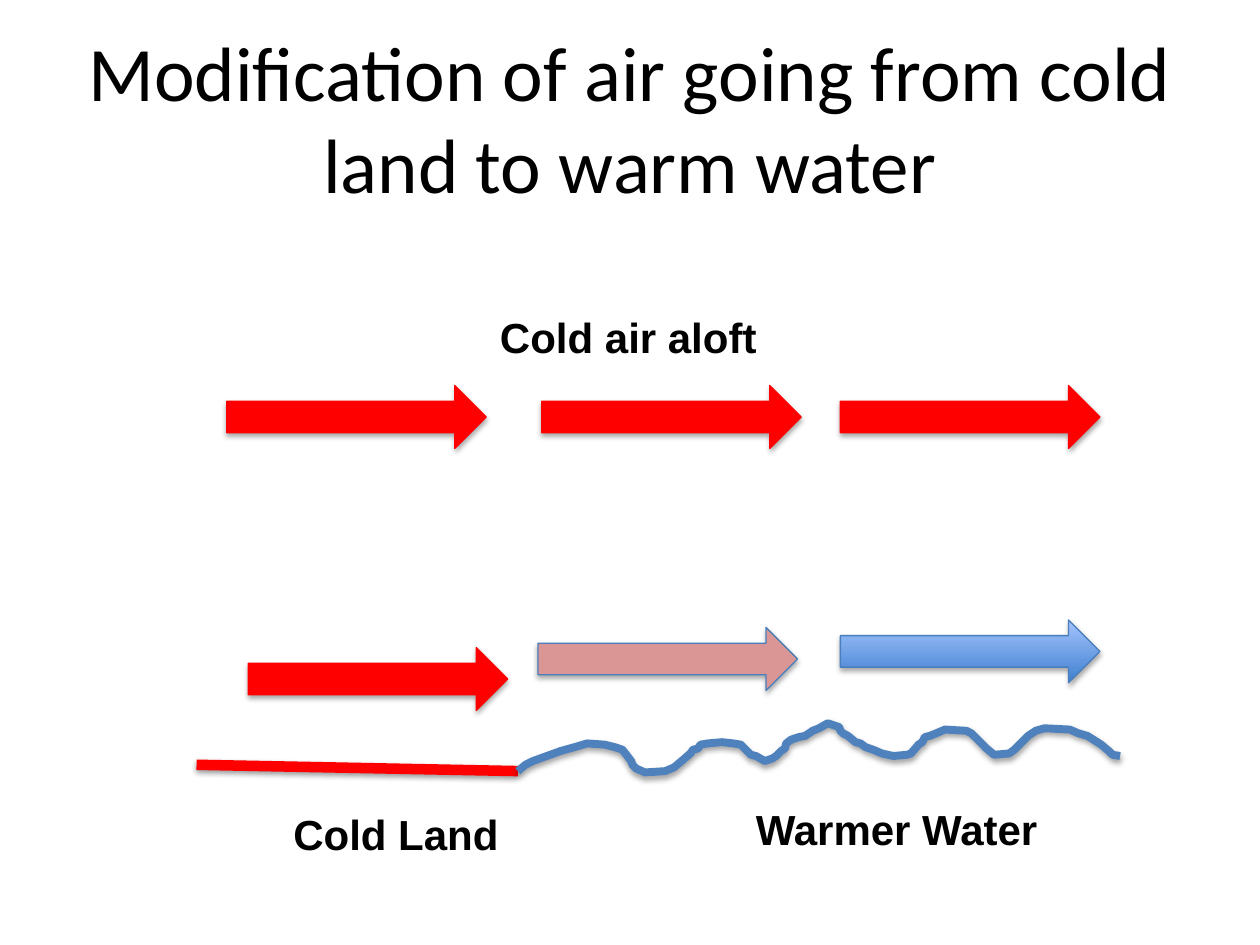
from pptx import Presentation
from pptx.dml.color import RGBColor
from pptx.enum.shapes import MSO_CONNECTOR, MSO_SHAPE
from pptx.enum.text import MSO_ANCHOR, MSO_AUTO_SIZE, PP_ALIGN
from pptx.util import Inches, Pt

COLORS = {
    "text": "000000",
    "cold": "FF0000",
    "mixed": "D99694",
    "arrow_edge": "4B7EBC",
    "warm_dark": "3F80CE",
    "warm_light": "A4C4FF",
    "water": "4F81BD",
}


class AirflowSlide:
    title_font = {"name": "Calibri", "size": Pt(44)}
    label_font = {"name": "Arial", "size": Pt(24), "bold": True}
    arrow_size = (2.06, 0.5)

    def __init__(self, deck):
        self.slide = deck.slides.add_slide(deck.slide_layouts[5])

    def color(self, name):
        return RGBColor.from_string(COLORS[name])

    def format_font(self, font, values):
        for attribute, value in values.items():
            setattr(font, attribute, value)
        font.color.rgb = self.color("text")

    def stroke(self, line, color, width):
        line.color.rgb = self.color(color)
        line.width = Pt(width)

    def title(self, wording, left, top, width, height):
        heading = self.slide.shapes.title
        place = {"left": left, "top": top, "width": width, "height": height}
        for attribute, value in place.items():
            setattr(heading, attribute, Inches(value))
        frame = heading.text_frame
        frame.text = wording
        frame.vertical_anchor = MSO_ANCHOR.MIDDLE
        frame.paragraphs[0].alignment = PP_ALIGN.CENTER
        self.format_font(frame.paragraphs[0].font, self.title_font)

    def label(self, wording, left, top, width):
        box = self.slide.shapes.add_textbox(
            Inches(left), Inches(top), Inches(width), Inches(0.5))
        frame = box.text_frame
        frame.text = wording
        frame.word_wrap = False
        frame.auto_size = MSO_AUTO_SIZE.SHAPE_TO_FIT_TEXT
        self.format_font(frame.paragraphs[0].font, self.label_font)

    def arrow(self, left, top, fill="cold", edge="cold"):
        width, height = self.arrow_size
        wind = self.slide.shapes.add_shape(
            MSO_SHAPE.RIGHT_ARROW,
            Inches(left), Inches(top), Inches(width), Inches(height))
        if isinstance(fill, tuple):
            wind.fill.gradient()
            wind.fill.gradient_angle = 90
            for stop, name, position in zip(wind.fill.gradient_stops, fill, (0, 1)):
                stop.color.rgb = self.color(name)
                stop.position = position
        else:
            wind.fill.solid()
            wind.fill.fore_color.rgb = self.color(fill)
        self.stroke(wind.line, edge, 0.75)

    def line(self, start, end, color, width):
        ground = self.slide.shapes.add_connector(
            MSO_CONNECTOR.STRAIGHT, *map(Inches, start + end))
        self.stroke(ground.line, color, width)

    def curve(self, points, color, width):
        start, *rest = [(Inches(x), Inches(y)) for x, y in points]
        builder = self.slide.shapes.build_freeform(*start)
        builder.add_line_segments(rest, close=False)
        surface = builder.convert_to_shape()
        surface.fill.background()
        self.stroke(surface.line, color, width)


WAVES = [
    (4.11, 6.12), (4.17, 6.07), (4.23, 6.04), (4.45, 5.96), (4.56, 5.93),
    (4.66, 5.9), (4.8, 5.91), (4.88, 5.93), (4.94, 5.95), (5.01, 6.04),
    (5.02, 6.07), (5.05, 6.1), (5.12, 6.13), (5.28, 6.12), (5.35, 6.09),
    (5.41, 6.04), (5.48, 5.98), (5.5, 5.95), (5.54, 5.94), (5.56, 5.91),
    (5.62, 5.9), (5.73, 5.89), (5.82, 5.9), (5.88, 5.91), (5.91, 5.94),
    (5.96, 5.99), (6, 6), (6.07, 6.04), (6.13, 6.02), (6.16, 6),
    (6.2, 5.96), (6.23, 5.94), (6.24, 5.9), (6.28, 5.87), (6.34, 5.85),
    (6.39, 5.84), (6.45, 5.8), (6.5, 5.78), (6.57, 5.74), (6.66, 5.77),
    (6.67, 5.8), (6.69, 5.82), (6.73, 5.84), (6.79, 5.89), (6.83, 5.9),
    (6.87, 5.93), (6.93, 5.95), (7, 5.98), (7.09, 6), (7.2, 5.99),
    (7.23, 5.98), (7.29, 5.91), (7.32, 5.89), (7.34, 5.85), (7.38, 5.84),
    (7.43, 5.82), (7.5, 5.79), (7.67, 5.8), (7.71, 5.82), (7.77, 5.88),
    (7.83, 5.94), (7.89, 5.99), (8.01, 5.98), (8.05, 5.95), (8.12, 5.88),
    (8.16, 5.84), (8.22, 5.8), (8.29, 5.78), (8.49, 5.79), (8.56, 5.82),
    (8.63, 5.84), (8.71, 5.89), (8.74, 5.91), (8.8, 5.96), (8.83, 5.99),
    (8.89, 6),
]


def main():
    deck = Presentation()
    deck.slide_width, deck.slide_height = Inches(10), Inches(7.5)
    page = AirflowSlide(deck)

    page.title("Modification of air going from cold land to warm water",
               0.5, 0.3, 9, 1.25)
    page.line((1.56, 6.07), (4.11, 6.12), "cold", 6)
    page.curve(WAVES, "water", 4.5)

    for left in (1.8, 4.3, 6.67):
        page.arrow(left, 3.06)
    page.arrow(1.97, 5.14)
    page.arrow(4.27, 4.98, "mixed", "arrow_edge")
    page.arrow(6.67, 4.92, ("warm_dark", "warm_light"), "arrow_edge")

    page.label("Cold air aloft", 3.87, 2.42, 2.26)
    page.label("Cold Land", 2.23, 6.37, 1.84)
    page.label("Warmer Water", 5.9, 6.33, 2.46)

    deck.save("out.pptx")


if __name__ == "__main__":
    main()
